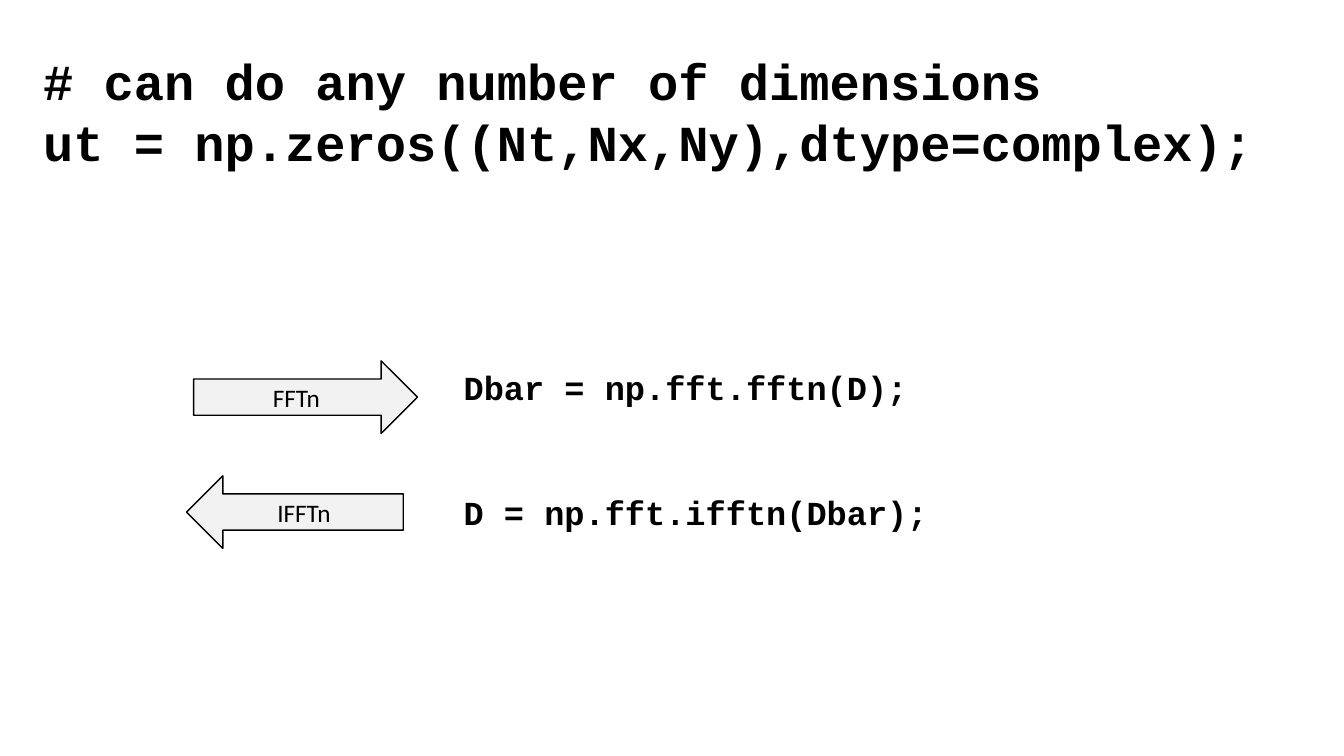
from dataclasses import dataclass

from pptx import Presentation
from pptx import util as u
from pptx.dml.color import RGBColor
from pptx.enum import shapes, text
from pptx.slide import Slide
from pptx.text.text import TextFrame

BLACK = RGBColor(0x00, 0x00, 0x00)
PALE_GREY = RGBColor(0xF2, 0xF2, 0xF2)

CODE_FORMAT = {"name": "Courier New", "bold": True}
LABEL_FORMAT = {"name": "Calibri", "size": u.Pt(18), "bold": False}


@dataclass
class TransformArrow:
    label: str
    direction: shapes.MSO_SHAPE
    left: float
    top: float
    width: float
    height: float = 0.72


@dataclass
class CodeBlock:
    lines: list[str]
    size: int
    left: float
    top: float
    width: float
    height: float


ARROWS = [
    TransformArrow("FFTn", shapes.MSO_SHAPE.RIGHT_ARROW, 1.92, 3.58, 2.22),
    TransformArrow("IFFTn", shapes.MSO_SHAPE.LEFT_ARROW, 1.85, 4.72, 2.15),
]
CODE_BLOCKS = [
    CodeBlock(["Dbar = np.fft.fftn(D);"], 24, 4.5, 3.59, 6.67, 0.5),
    CodeBlock(["D = np.fft.ifftn(Dbar);"], 24, 4.5, 4.83, 6.67, 0.5),
    CodeBlock(
        ["# can do any number of dimensions", "ut = np.zeros((Nt,Nx,Ny),dtype=complex);"],
        36, 0.33, 0.45, 12.82, 1.31,
    ),
]


def place(part: TransformArrow | CodeBlock) -> list[u.Length]:
    return [u.Inches(v) for v in (part.left, part.top, part.width, part.height)]


def write_lines(frame: TextFrame, lines: list[str], font_format: dict,
                alignment: text.PP_ALIGN) -> None:
    frame.word_wrap = True
    for index, line in enumerate(lines):
        paragraph = frame.add_paragraph() if index else frame.paragraphs[0]
        paragraph.alignment = alignment
        run = paragraph.add_run()
        run.text = line
        for attribute, value in font_format.items():
            setattr(run.font, attribute, value)
        run.font.color.rgb = BLACK


def draw_arrow(slide: Slide, arrow: TransformArrow) -> None:
    outline = slide.shapes.add_shape(arrow.direction, *place(arrow))
    outline.shadow.inherit = False
    outline.fill.solid()
    outline.fill.fore_color.rgb = PALE_GREY
    outline.line.color.rgb = BLACK
    outline.line.width = u.Pt(1)
    outline.text_frame.vertical_anchor = text.MSO_ANCHOR.MIDDLE
    write_lines(outline.text_frame, [arrow.label], LABEL_FORMAT, text.PP_ALIGN.CENTER)


def draw_code(slide: Slide, block: CodeBlock) -> None:
    frame = slide.shapes.add_textbox(*place(block)).text_frame
    frame.auto_size = text.MSO_AUTO_SIZE.SHAPE_TO_FIT_TEXT
    code_format = CODE_FORMAT | {"size": u.Pt(block.size)}
    write_lines(frame, block.lines, code_format, text.PP_ALIGN.LEFT)


def main() -> None:
    deck = Presentation()
    deck.slide_width, deck.slide_height = u.Inches(13.33), u.Inches(7.5)
    slide = deck.slides.add_slide(deck.slide_layouts[6])

    # Forward and inverse transform arrows
    for arrow in ARROWS:
        draw_arrow(slide, arrow)

    # Code for each transform and the array setup
    for block in CODE_BLOCKS:
        draw_code(slide, block)

    deck.save("out.pptx")


if __name__ == "__main__":
    main()
